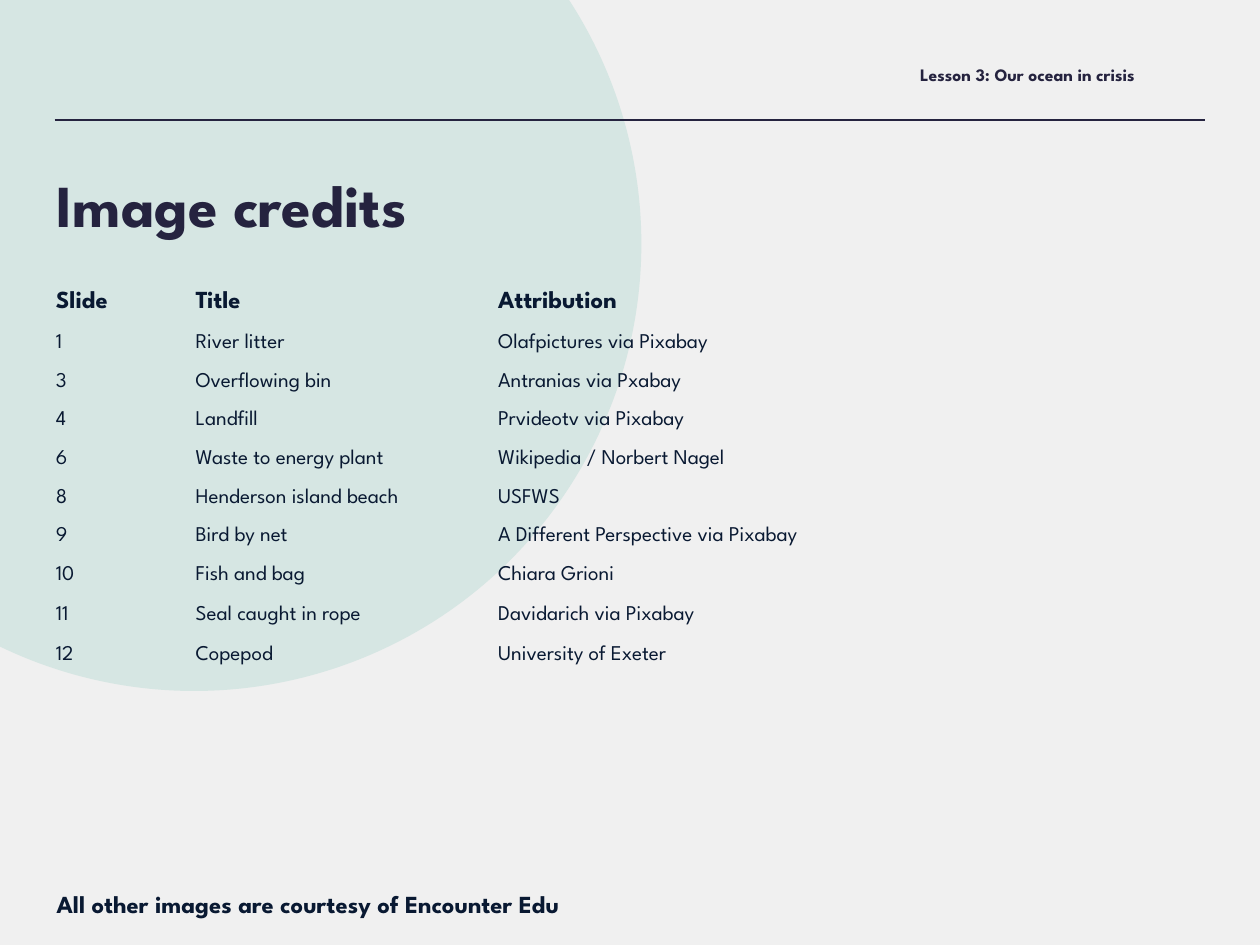
from lxml.etree import SubElement
from pptx import Presentation
from pptx.dml.color import RGBColor
from pptx.enum.shapes import MSO_CONNECTOR, MSO_SHAPE
from pptx.enum.text import MSO_ANCHOR, PP_ALIGN
from pptx.oxml.ns import qn
from pptx.util import Cm, Pt

FONT = "League Spartan"
PAPER = RGBColor(0xF0, 0xF0, 0xF0)
MINT = RGBColor(0x6E, 0xBE, 0xAF)
PLUM = RGBColor(0x25, 0x23, 0x3F)
NAVY = RGBColor(0x09, 0x19, 0x32)
PLAIN = "{2D5ABB26-0587-4C30-8999-92F81FD0307C}"  # no style, no grid

HEADS = ("Slide", "Title", "Attribution")
CREDITS = [
    ("1", "River litter", "Olafpictures via Pixabay"),
    ("3", "Overflowing bin", "Antranias via Pxabay"),
    ("4", "Landfill", "Prvideotv via Pixabay"),
    ("6", "Waste to energy plant", "Wikipedia / Norbert Nagel"),
    ("8", "Henderson island beach", "USFWS"),
    ("9", "Bird by net", "A Different Perspective via Pixabay"),
    ("10", "Fish and bag", "Chiara Grioni"),
    ("11", "Seal caught in rope", "Davidarich via Pixabay"),
    ("12", "Copepod", "University of Exeter"),
]
SPARE = 6  # rows left free for further credits


def add_run(para, text, size, color, bold=True):
    run = para.add_run()
    run.text = text
    run.font.name = FONT
    run.font.size = Pt(size)
    run.font.bold = bold
    run.font.color.rgb = color


def add_label(slide, box, text, size, color):
    frame = slide.shapes.add_textbox(*map(Cm, box)).text_frame
    frame.word_wrap = True
    frame.margin_left = frame.margin_right = Cm(0.13)
    frame.margin_top = frame.margin_bottom = Cm(0.13)
    add_run(frame.paragraphs[0], text, size, color)
    return frame


def add_disc(slide, box):
    disc = slide.shapes.add_shape(MSO_SHAPE.OVAL, *map(Cm, box))
    disc.shadow.inherit = False
    disc.fill.solid()
    disc.fill.fore_color.rgb = MINT
    tint = disc.fill._xPr.find(qn("a:solidFill"))[0]
    SubElement(tint, qn("a:alpha"), val="20000")
    disc.line.fill.background()


def add_header(slide, box):
    """Place the lesson name above a rule along the bottom of the box."""
    left, top, width, height = box
    base = top + height
    rule = slide.shapes.add_connector(
        MSO_CONNECTOR.STRAIGHT, Cm(left), Cm(base), Cm(left + width), Cm(base))
    rule.line.color.rgb = PLUM
    rule.line.width = Pt(1)
    SubElement(rule._element.spPr, qn("a:effectLst"))

    name = (left + width - 11.61, top, 10.31, 0.76)
    frame = add_label(slide, name, "Lesson 3: Our ocean in crisis", 10, PLUM)
    frame.vertical_anchor = MSO_ANCHOR.MIDDLE
    frame.paragraphs[0].alignment = PP_ALIGN.RIGHT
    frame.paragraphs[0].line_spacing = 0.9


def add_credits(slide, box):
    rows = [HEADS] + CREDITS
    total = len(rows) + SPARE
    table = slide.shapes.add_table(total, len(HEADS), *map(Cm, box)).table
    table.first_row = table.horz_banding = False
    table._tbl.tblPr.find(qn("a:tableStyleId")).text = PLAIN

    first, second = 2.82, 6.1
    widths = (first, second, box[2] - first - second)
    for col, width in zip(table.columns, widths):
        col.width = Cm(width)
    heights = [0.86] + [0.78] * 6 + [0.81] * (total - 7)
    for row, height in zip(table.rows, heights):
        row.height = Cm(height)
        for cell in row.cells:
            cell.fill.background()
    for i, texts in enumerate(rows):
        head = i == 0
        for j, text in enumerate(texts):
            para = table.cell(i, j).text_frame.paragraphs[0]
            add_run(para, text, 14 if head else 12, NAVY, head)


def main():
    deck = Presentation()
    deck.slide_width, deck.slide_height = Cm(25.4), Cm(19.05)
    slide = deck.slides.add_slide(deck.slide_layouts[6])
    slide.background.fill.solid()
    slide.background.fill.fore_color.rgb = PAPER

    add_disc(slide, (-5.1, -4.1, 18.03, 18.03))
    add_header(slide, (1.1, 1.15, 23.2, 1.27))
    add_label(slide, (1.02, 3.25, 14.2, 1.7), "Image credits", 34, PLUM)
    add_label(slide, (1.01, 17.8, 21.18, 0.86),
              "All other images are courtesy of Encounter Edu", 14, NAVY)
    add_credits(slide, (0.87, 5.74, 23.42, 12.83))
    deck.save("out.pptx")


if __name__ == "__main__":
    main()
